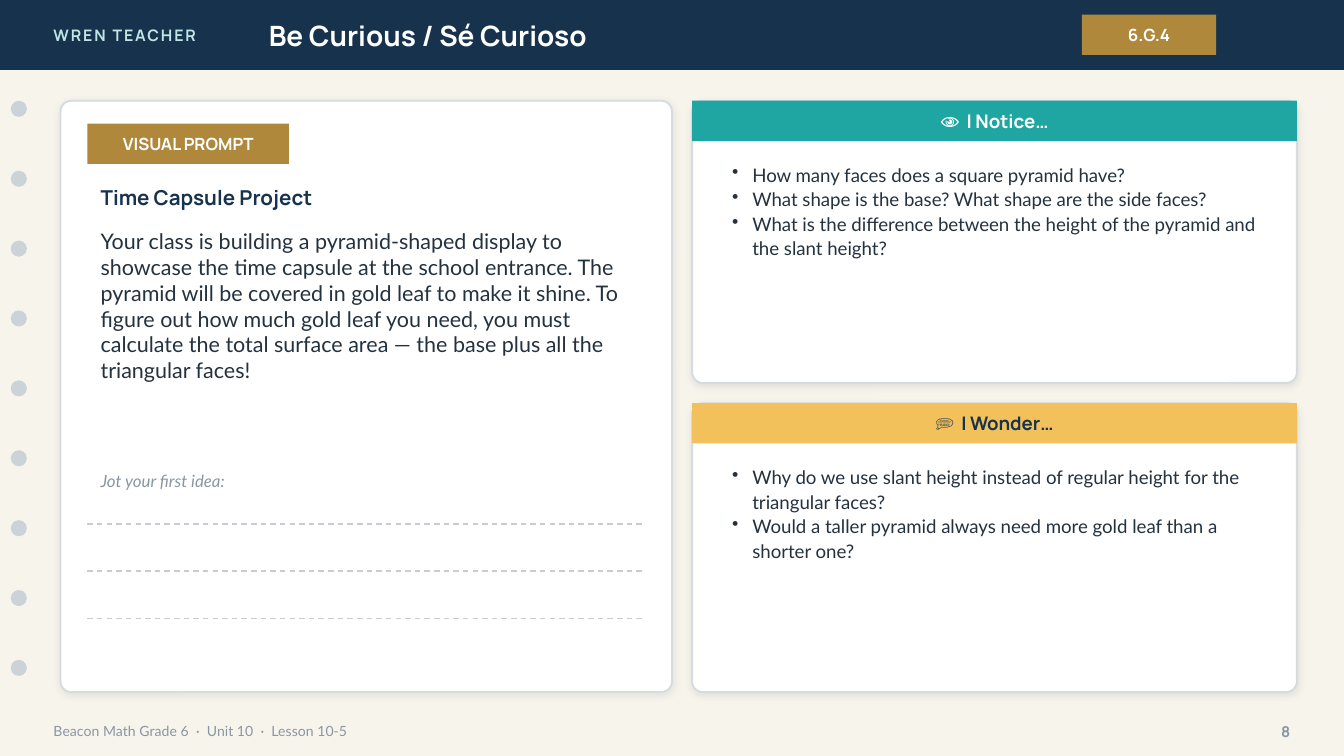
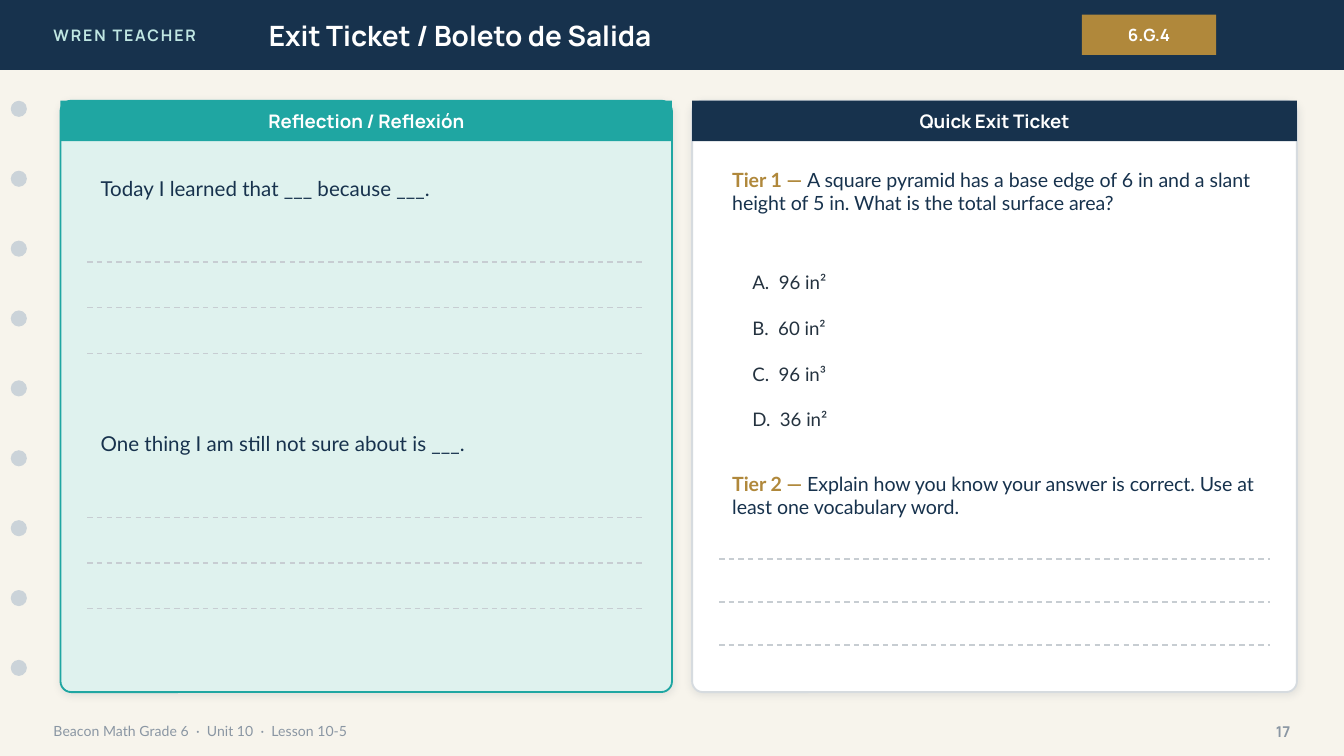
from lxml import etree
from pptx import Presentation
from pptx import util as u
from pptx.dml.color import RGBColor
from pptx.enum import dml, shapes, text
from pptx.oxml import ns

WIDTH = 10
MARGIN_TOP = 0.75
BAND = 0.52
LABEL = 0.3
LEFT, LEFT_WIDTH = 0.45, 4.55
RIGHT, RIGHT_WIDTH = 5.15, 4.5
FULL_HEIGHT = 4.4
PAD = 0.2
CORNER = 0.08

CREAM, NAVY, GOLD, TEAL, YELLOW = "F7F4EC", "17324D", "B0883B", "1FA6A2", "F2C15B"
MINT, WHITE, INK, GRAY = "DFF2EE", "FFFFFF", "24323F", "8A96A3"
BORDER, RULE, DOT, PALE, SHADE = "D6DBDF", "C7CDD2", "CBD3D9", "BFE6E2", "1C2E42"

HEAD = {"name": "Manrope", "bold": True}
BODY = {"name": "Lato", "bold": False}
TOP, MIDDLE = text.MSO_ANCHOR.TOP, text.MSO_ANCHOR.MIDDLE
ALIGN = text.PP_ALIGN


def rgb(value):
    return RGBColor.from_string(value)


class Worksheet:
    """Builds lesson slides that share one style."""

    def __init__(self):
        self.deck = Presentation()
        self.deck.slide_width = u.Inches(WIDTH)
        self.deck.slide_height = u.Inches(WIDTH * 9 / 16)
        self.page = None

    def start(self, title, number):
        self.page = self.deck.slides.add_slide(self.deck.slide_layouts[5])
        fill = self.page.background.fill
        fill.solid()
        fill.fore_color.rgb = rgb(CREAM)
        self.shape("RECTANGLE", 0, 0, WIDTH, BAND, NAVY)
        self.text(0.3, 0, 2.4, BAND, "WREN TEACHER", HEAD, 8.5, PALE, spacing=1)
        self.title(title)
        self.tag(8.05, 0.11, 1, "6.G.4")
        for row in range(9):
            self.shape("OVAL", 0.08, MARGIN_TOP + row * BAND, 0.12, 0.12, DOT)
        self.text(0.3, 5.3, 7, 0.28, "Beacon Math Grade 6  ·  Unit 10  ·  Lesson 10-5",
                  BODY, 7.5, GRAY)
        self.text(9.2, 5.3, 0.5, 0.28, str(number), HEAD, 8, GRAY, align=ALIGN.RIGHT)

    def title(self, words):
        box = self.page.shapes.title
        self.page.shapes._spTree.append(box._element)
        place = {"left": 1.9, "top": 0, "width": 5.6, "height": BAND}
        for side, length in place.items():
            setattr(box, side, u.Inches(length))
        box.text_frame.auto_size = text.MSO_AUTO_SIZE.NONE
        self.fill_text(box.text_frame, [words], HEAD, 15, WHITE)

    def fill_text(self, frame, paras, style, size, color, anchor=MIDDLE,
                  align=ALIGN.LEFT, line_spacing=None, bullet=False, spacing=0):
        frame.word_wrap = True
        frame.vertical_anchor = anchor
        for index, content in enumerate(paras):
            para = frame.add_paragraph() if index else frame.paragraphs[0]
            para.alignment = align
            if line_spacing:
                para.line_spacing = line_spacing
            if bullet:
                self.bullet(para)
            spans = [(content, {})] if isinstance(content, str) else content
            for words, changes in spans:
                span = para.add_run()
                span.text = words
                look = {**style, "size": u.Pt(size), "color": color, **changes}
                span.font.color.rgb = rgb(look.pop("color"))
                for key, value in look.items():
                    setattr(span.font, key, value)
                if spacing:
                    span._r.get_or_add_rPr().set("spc", str(spacing * 100))

    def bullet(self, para):
        props = para._p.get_or_add_pPr()
        indent = u.Inches(0.15)
        props.set("marL", str(indent))
        props.set("indent", str(-indent))
        etree.SubElement(props, ns.qn("a:buChar")).set("char", "•")

    def text(self, left, top, width, height, content, style, size, color, **options):
        box = self.page.shapes.add_textbox(*map(u.Inches, (left, top, width, height)))
        paras = content if isinstance(content, list) else [content]
        self.fill_text(box.text_frame, paras, style, size, color, **options)

    def shape(self, kind, left, top, width, height, fill, line=None):
        box = self.page.shapes.add_shape(
            getattr(shapes.MSO_SHAPE, kind), *map(u.Inches, (left, top, width, height)))
        box.fill.solid()
        box.fill.fore_color.rgb = rgb(fill)
        if line:
            box.line.color.rgb = rgb(line)
            box.line.width = u.Pt(1)
        else:
            box.line.fill.background()
        box.shadow.inherit = False
        return box

    def label(self, left, top, width, words, fill, size, color=WHITE):
        box = self.shape("RECTANGLE", left, top, width, LABEL, fill)
        self.fill_text(box.text_frame, [words], HEAD, size, color, align=ALIGN.CENTER)

    def tag(self, left, top, width, words):
        self.label(left, top, width, words, GOLD, 9)

    def card(self, left, top, width, height, fill=WHITE, line=BORDER):
        box = self.shape("ROUNDED_RECTANGLE", left, top, width, height, fill, line)
        box.adjustments[0] = CORNER / min(width, height)
        effects = box._element.spPr.find(ns.qn("a:effectLst"))
        shadow = etree.SubElement(effects, ns.qn("a:outerShdw"), blurRad=str(u.Pt(4)),
                                  dist=str(u.Pt(1)), dir="5400000", rotWithShape="0")
        tint = etree.SubElement(shadow, ns.qn("a:srgbClr"), val=SHADE)
        etree.SubElement(tint, ns.qn("a:alpha"), val="10000")

    def panel(self, left, top, width, height, heading, band, color=WHITE, **look):
        self.card(left, top, width, height, **look)
        self.label(left, top, width, heading, band, 10, color)

    def questions(self, top, height, heading, band, color, items):
        self.panel(RIGHT, top, RIGHT_WIDTH, height, heading, band, color)
        self.text(RIGHT + PAD, top + 0.4, RIGHT_WIDTH - 2 * PAD, height - 0.5, items,
                  BODY, 10, INK, anchor=TOP, line_spacing=1.1, bullet=True)

    def tier(self, top, height, name, task):
        spans = [(f"{name} — ", {"color": GOLD, "bold": True}), (task, {})]
        self.text(RIGHT + PAD, top, RIGHT_WIDTH - 2 * PAD, height, [spans],
                  BODY, 10.5, NAVY, anchor=TOP)

    def writing_lines(self, left, top, width, step):
        for row in range(3):
            y = u.Inches(top + row * step)
            rule = self.page.shapes.add_connector(
                shapes.MSO_CONNECTOR.STRAIGHT, u.Inches(left), y, u.Inches(left + width), y)
            rule.line.color.rgb = rgb(RULE)
            rule.line.width = u.Pt(0.75)
            rule.line.dash_style = dml.MSO_LINE.DASH
            etree.SubElement(rule._element.spPr, ns.qn("a:effectLst"))


def be_curious(sheet):
    inner, inner_width = LEFT + PAD, LEFT_WIDTH - 2 * PAD
    sheet.start("Be Curious / Sé Curioso", 8)
    sheet.card(LEFT, MARGIN_TOP, LEFT_WIDTH, FULL_HEIGHT)
    sheet.tag(inner, 0.92, 1.5, "VISUAL PROMPT")
    sheet.text(inner, 1.32, inner_width, 0.3, "Time Capsule Project", HEAD, 11, NAVY)
    sheet.text(inner, 1.65, inner_width, 1.7,
               "Your class is building a pyramid-shaped display to showcase the time capsule "
               "at the school entrance. The pyramid will be covered in gold leaf to make it "
               "shine. To figure out how much gold leaf you need, you must calculate the total "
               "surface area — the base plus all the triangular faces!",
               BODY, 11.5, INK, anchor=TOP)
    sheet.text(inner, 3.45, 4, 0.25, "Jot your first idea:", {**BODY, "italic": True}, 9, GRAY)
    sheet.writing_lines(inner, 3.9, inner_width, 0.35)
    sheet.questions(MARGIN_TOP, 2.1, "👁  I Notice…", TEAL, WHITE, [
        "How many faces does a square pyramid have?",
        "What shape is the base? What shape are the side faces?",
        "What is the difference between the height of the pyramid and the slant height?"])
    sheet.questions(3, 2.15, "💭  I Wonder…", YELLOW, NAVY, [
        "Why do we use slant height instead of regular height for the triangular faces?",
        "Would a taller pyramid always need more gold leaf than a shorter one?"])


def exit_ticket(sheet):
    inner, inner_width = LEFT + PAD, LEFT_WIDTH - 2 * PAD
    sheet.start("Exit Ticket / Boleto de Salida", 17)
    sheet.panel(LEFT, MARGIN_TOP, LEFT_WIDTH, FULL_HEIGHT, "Reflection / Reflexión", TEAL,
                fill=MINT, line=TEAL)
    prompts = ["Today I learned that ___ because ___.",
               "One thing I am still not sure about is ___."]
    for row, prompt in enumerate(prompts):
        top = 1.2 + row * 1.9
        sheet.text(inner, top, inner_width, 0.4, prompt, BODY, 11, NAVY)
        sheet.writing_lines(inner, top + 0.75, inner_width, 0.34)
    sheet.panel(RIGHT, MARGIN_TOP, RIGHT_WIDTH, FULL_HEIGHT, "Quick Exit Ticket", NAVY)
    sheet.tier(1.2, 0.7, "Tier 1", "A square pyramid has a base edge of 6 in and a slant "
               "height of 5 in. What is the total surface area?")
    for row, choice in enumerate(["A.  96 in²", "B.  60 in²", "C.  96 in³", "D.  36 in²"]):
        sheet.text(5.5, 1.95 + row * 0.34, 3.9, 0.3, choice, BODY, 10, INK)
    sheet.tier(3.46, 0.55, "Tier 2", "Explain how you know your answer is correct. "
               "Use at least one vocabulary word.")
    sheet.writing_lines(RIGHT + PAD, 4.16, RIGHT_WIDTH - 2 * PAD, 0.32)


def main():
    sheet = Worksheet()
    be_curious(sheet)
    exit_ticket(sheet)
    sheet.deck.save("out.pptx")


if __name__ == "__main__":
    main()
